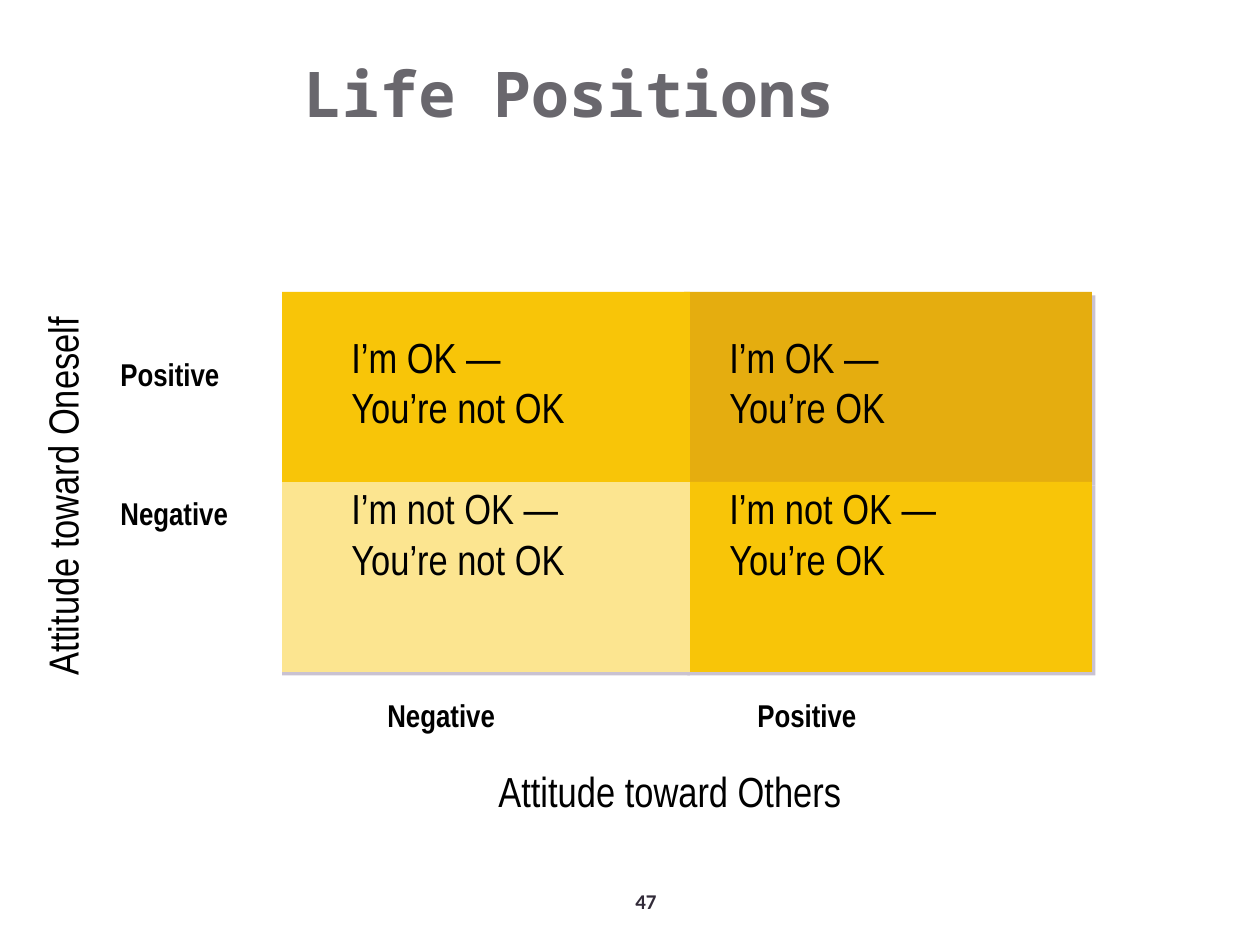
from lxml import etree
from pptx import Presentation
from pptx import util as u
from pptx.dml.color import RGBColor
from pptx.enum import shapes, text
from pptx.oxml.ns import qn

PX = 914400 / 126
GREY = RGBColor(0x69, 0x67, 0x6D)
INK = RGBColor(0x32, 0x2B, 0x39)
BLACK = RGBColor(0, 0, 0)
GOLD = RGBColor(0xF8, 0xC5, 0x08)
DARK_GOLD = RGBColor(0xE5, 0xAD, 0x0F)
PALE_GOLD = RGBColor(0xFC, 0xE5, 0x90)
SHADOW = RGBColor(0xC9, 0xC2, 0xD1)
CENTER = text.PP_ALIGN.CENTER
MIDDLE = text.MSO_ANCHOR.MIDDLE


def px(n):
    return u.Emu(round(n * PX))


def add_tab(p, pos):
    tabs = etree.SubElement(p._p.get_or_add_pPr(), qn("a:tabLst"))
    etree.SubElement(tabs, qn("a:tab"), pos=str(px(pos)), algn="l")


def write(p, words, *, font="Arial Narrow", size=24, color=BLACK, bold=False,
          align=None, before=None, tab=None):
    if tab:
        add_tab(p, tab)
    p.alignment = align
    if before:
        p.space_before = u.Pt(before)
    r = p.add_run()
    r.text = words
    r.font.name, r.font.size, r.font.bold = font, u.Pt(size), bold
    r.font.color.rgb = color


class Matrix:
    def __init__(self, slide):
        self.s = slide

    def cell(self, x, y, w, h, fill, shadow=None):
        """Draw a quadrant; shadow is (distance in points, angle in degrees)."""
        sp = self.s.shapes.add_shape(shapes.MSO_SHAPE.RECTANGLE,
                                     px(x), px(y), px(w), px(h))
        sp.shadow.inherit = False
        sp.fill.solid()
        sp.fill.fore_color.rgb = fill
        sp.line.fill.background()
        if shadow:
            dist, angle = shadow
            effects = sp._element.spPr.find(qn("a:effectLst"))
            outer = etree.SubElement(effects, qn("a:outerShdw"), blurRad="0",
                                     dist=str(u.Pt(dist)), dir=str(angle * 60000),
                                     algn="ctr", rotWithShape="0")
            etree.SubElement(outer, qn("a:srgbClr"), val=str(SHADOW))

    def label(self, x, y, w, h, lines, *, gaps=None, wrap=False, anchor=None,
              rotation=0, **style):
        """Add a text box; gaps maps a line's index to the points before it."""
        sp = self.s.shapes.add_textbox(px(x), px(y), px(w), px(h))
        sp.rotation = rotation
        tf = sp.text_frame
        tf.word_wrap = wrap
        if anchor is not None:
            tf.vertical_anchor = anchor
        for i, words in enumerate(lines):
            p = tf.add_paragraph() if i else tf.paragraphs[0]
            write(p, words, before=(gaps or {}).get(i), **style)


def main():
    prs = Presentation()
    prs.slide_width, prs.slide_height = u.Inches(10), u.Inches(7.5)
    m = Matrix(prs.slides.add_slide(prs.slide_layouts[6]))

    m.label(252, 876, 788, 50, ["47"], wrap=True, anchor=MIDDLE, align=CENTER,
            font="Calibri", size=12, color=INK, bold=True)
    m.label(0, 0, 1139, 184, ["Life Positions"], wrap=True, anchor=MIDDLE,
            align=CENTER, font="Noto Sans Mono", size=36, color=GREY, bold=True)

    left, right, top, bottom = 282, 684, 292, 482
    for x, y, fill, shadow in [(right, top, DARK_GOLD, (2.8, 45)),
                               (right, bottom, GOLD, (2.8, 45)),
                               (left, bottom, PALE_GOLD, (2, 90)),
                               (left, top, GOLD, None)]:
        m.cell(x, y, 408, 190, fill, shadow)

    m.label(339, 325, 610, 265,
            ["I’m OK —\tI’m OK —", "You’re not OK\tYou’re OK",
             "I’m not OK —\tI’m not OK —", "You’re not OK\tYou’re OK"],
            gaps={2: 29}, tab=378)
    m.label(-130, 464, 384, 63, ["Attitude toward Oneself"], rotation=270)
    m.label(486, 759, 369, 63, ["Attitude toward Others"])
    m.label(375, 690, 507, 54, ["Negative\tPositive"], size=18, bold=True, tab=370)
    m.label(108, 349, 145, 210, ["Positive", "Negative"], gaps={1: 58},
            size=18, bold=True)
    prs.save("out.pptx")


if __name__ == "__main__":
    main()
